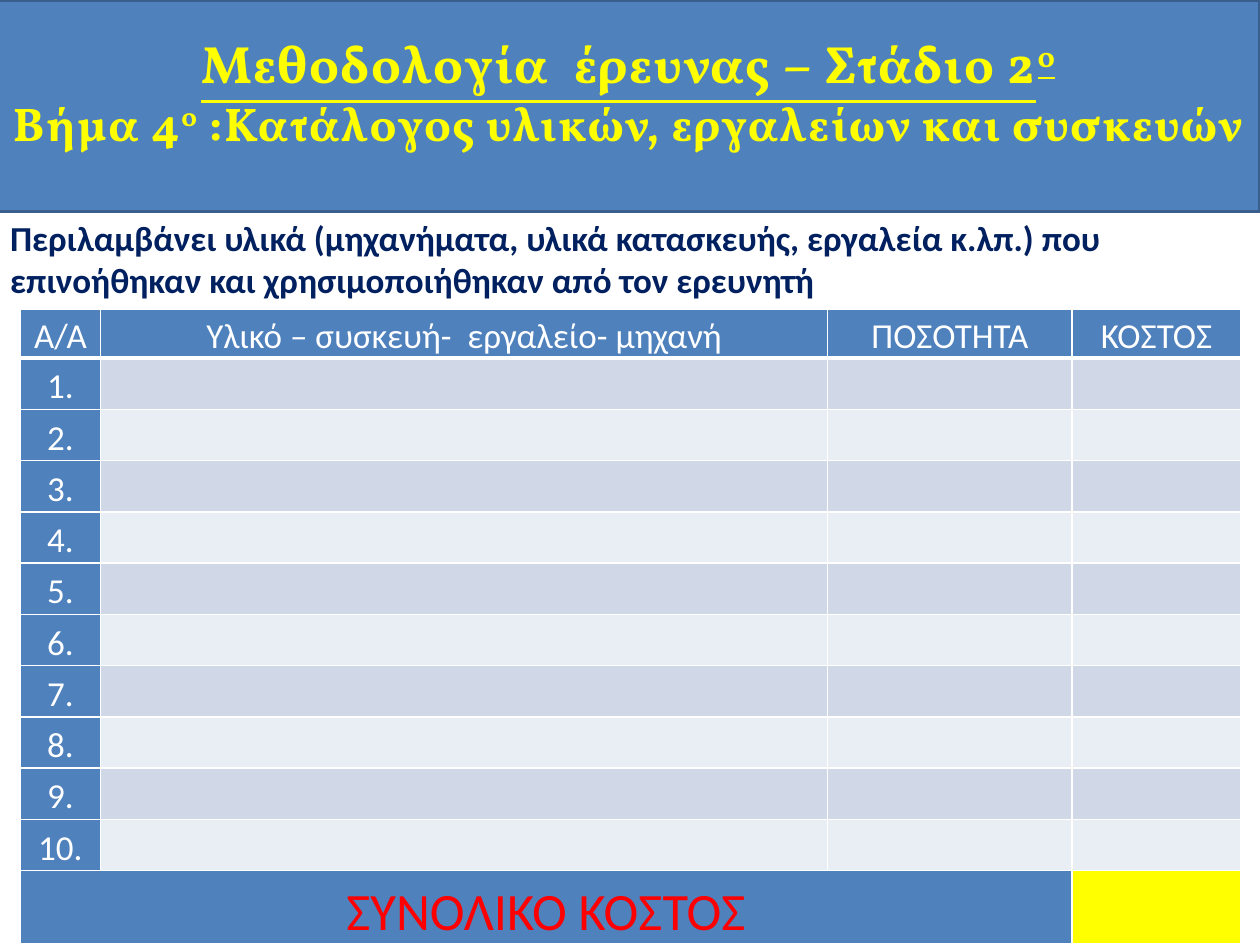
import pptx
import pptx.dml.color
import pptx.enum.shapes
import pptx.enum.text
import pptx.oxml
import pptx.oxml.ns
import pptx.util

RGBColor = pptx.dml.color.RGBColor
BLUE = RGBColor(0x4F, 0x81, 0xBD)
DARK_BLUE = RGBColor(0x3A, 0x5F, 0x8C)
NAVY = RGBColor(0x00, 0x20, 0x60)
YELLOW = RGBColor(0xFF, 0xFF, 0x00)
RED = RGBColor(0xFF, 0x00, 0x00)
WHITE = RGBColor(0xFF, 0xFF, 0xFF)
BAND_COLORS = (RGBColor(0xD0, 0xD8, 0xE8), RGBColor(0xE9, 0xED, 0xF4))

SLIDE_WIDTH = pptx.util.Inches(10)
SLIDE_HEIGHT = pptx.util.Inches(7.5)
ALIGN = pptx.enum.text.PP_ALIGN
MIDDLE = pptx.enum.text.MSO_ANCHOR.MIDDLE

HEADINGS = ("Α/Α", "Υλικό – συσκευή-  εργαλείο- μηχανή", "ΠΟΣΟΤΗΤΑ", "ΚΟΣΤΟΣ")
COLUMN_WIDTHS = (0.64, 5.77, 1.94, 1.34)
ITEM_COUNT = 10
HEADING_HEIGHT = 0.39
TOTAL_HEIGHT = 0.58


def share_box(left, top, width, height):
    return (round(left * SLIDE_WIDTH), round(top * SLIDE_HEIGHT),
            round(width * SLIDE_WIDTH), round(height * SLIDE_HEIGHT))


def add_text(paragraph, text, size=20, color=WHITE, font="Calibri", bold=False,
             underline=False, raised=False, spacing=0):
    run = paragraph.add_run()
    run.text = text
    run.font.size = pptx.util.Pt(size)
    run.font.name = font
    run.font.bold = bold
    run.font.underline = underline
    run.font.color.rgb = color
    properties = run._r.get_or_add_rPr()
    if raised:
        properties.set("baseline", "30000")
    if spacing:
        properties.set("spc", str(round(spacing * 100)))


def set_insets(holder, left, top, right, bottom):
    holder.margin_left = pptx.util.Inches(left)
    holder.margin_top = pptx.util.Inches(top)
    holder.margin_right = pptx.util.Inches(right)
    holder.margin_bottom = pptx.util.Inches(bottom)


def add_header(slide, box):
    header = slide.shapes.add_shape(pptx.enum.shapes.MSO_SHAPE.RECTANGLE, *box)
    header.shadow.inherit = False
    header.fill.solid()
    header.fill.fore_color.rgb = BLUE
    header.line.color.rgb = DARK_BLUE
    header.line.width = pptx.util.Pt(2)
    frame = header.text_frame
    frame.word_wrap = False
    frame.vertical_anchor = MIDDLE
    set_insets(frame, 0.08, 0.04, 0.08, 0.28)
    style = dict(font="Vollkorn", color=YELLOW, bold=True, spacing=0.8)
    stage = frame.paragraphs[0]
    step = frame.add_paragraph()
    stage.alignment = step.alignment = ALIGN.CENTER
    add_text(stage, "Μεθοδολογία  έρευνας – Στάδιο 2", size=30, underline=True, **style)
    add_text(stage, "ο", size=30, underline=True, raised=True, **style)
    add_text(step, "Βήμα 4", size=27, **style)
    add_text(step, "ο", size=27, raised=True, **style)
    add_text(step, " :Κατάλογος υλικών, εργαλείων και συσκευών", size=27, **style)


def add_description(slide, box):
    frame = slide.shapes.add_textbox(*box).text_frame
    frame.word_wrap = True
    set_insets(frame, 0.08, 0.04, 0.08, 0.04)
    add_text(frame.paragraphs[0],
             "Περιλαμβάνει υλικά (μηχανήματα, υλικά κατασκευής, εργαλεία κ.λπ.) "
             "που επινοήθηκαν και χρησιμοποιήθηκαν από τον ερευνητή",
             color=NAVY, bold=True)


def set_borders(cell, bottom_width=1):
    properties = cell._tc.get_or_add_tcPr()
    widths = {"lnL": 1, "lnR": 1, "lnT": 1, "lnB": bottom_width}
    for position, (side, width) in enumerate(widths.items()):
        properties.insert(position, pptx.oxml.parse_xml(
            f'<a:{side} {pptx.oxml.ns.nsdecls("a")} w="{pptx.util.Pt(width)}">'
            f'<a:solidFill><a:srgbClr val="{WHITE}"/></a:solidFill></a:{side}>'))


def fill_cell(cell, fill, text="", bottom_width=1, **style):
    cell.fill.solid()
    cell.fill.fore_color.rgb = fill
    cell.vertical_anchor = MIDDLE
    set_insets(cell, 0.06, 0, 0.06, 0)
    set_borders(cell, bottom_width)
    if text:
        paragraph = cell.text_frame.paragraphs[0]
        paragraph.alignment = ALIGN.CENTER
        paragraph.line_spacing = 1.15
        add_text(paragraph, text, **style)


def add_materials_table(slide, box):
    total_row = ITEM_COUNT + 1
    last_column = len(HEADINGS) - 1
    table = slide.shapes.add_table(total_row + 1, len(HEADINGS), *box).table
    for column, width in zip(table.columns, COLUMN_WIDTHS):
        column.width = round(box[2] * width / sum(COLUMN_WIDTHS))
    heading_height = pptx.util.Inches(HEADING_HEIGHT)
    total_height = pptx.util.Inches(TOTAL_HEIGHT)
    for row in table.rows:
        row.height = round((box[3] - heading_height - total_height) / ITEM_COUNT)
    table.rows[0].height = heading_height
    table.rows[total_row].height = total_height

    for column, heading in enumerate(HEADINGS):
        fill_cell(table.cell(0, column), BLUE, heading, bottom_width=3)
    for item in range(1, total_row):
        fill_cell(table.cell(item, 0), BLUE, f"{item}.")
        for column in range(1, len(HEADINGS)):
            fill_cell(table.cell(item, column), BAND_COLORS[(item - 1) % 2])
    total_label = table.cell(total_row, 0)
    total_label.merge(table.cell(total_row, last_column - 1))
    fill_cell(total_label, BLUE, "ΣΥΝΟΛΙΚΟ ΚΟΣΤΟΣ", size=30, color=RED)
    fill_cell(table.cell(total_row, last_column), YELLOW)


def main():
    presentation = pptx.Presentation()
    presentation.slide_width = SLIDE_WIDTH
    presentation.slide_height = SLIDE_HEIGHT
    slide = presentation.slides.add_slide(presentation.slide_layouts[6])
    add_header(slide, share_box(-0.003, 0, 1.003, 0.224))
    add_description(slide, share_box(0, 0.224, 1, 0.148))
    add_materials_table(slide, share_box(0.016, 0.327, 0.969, 0.672))
    presentation.save("out.pptx")


if __name__ == "__main__":
    main()
